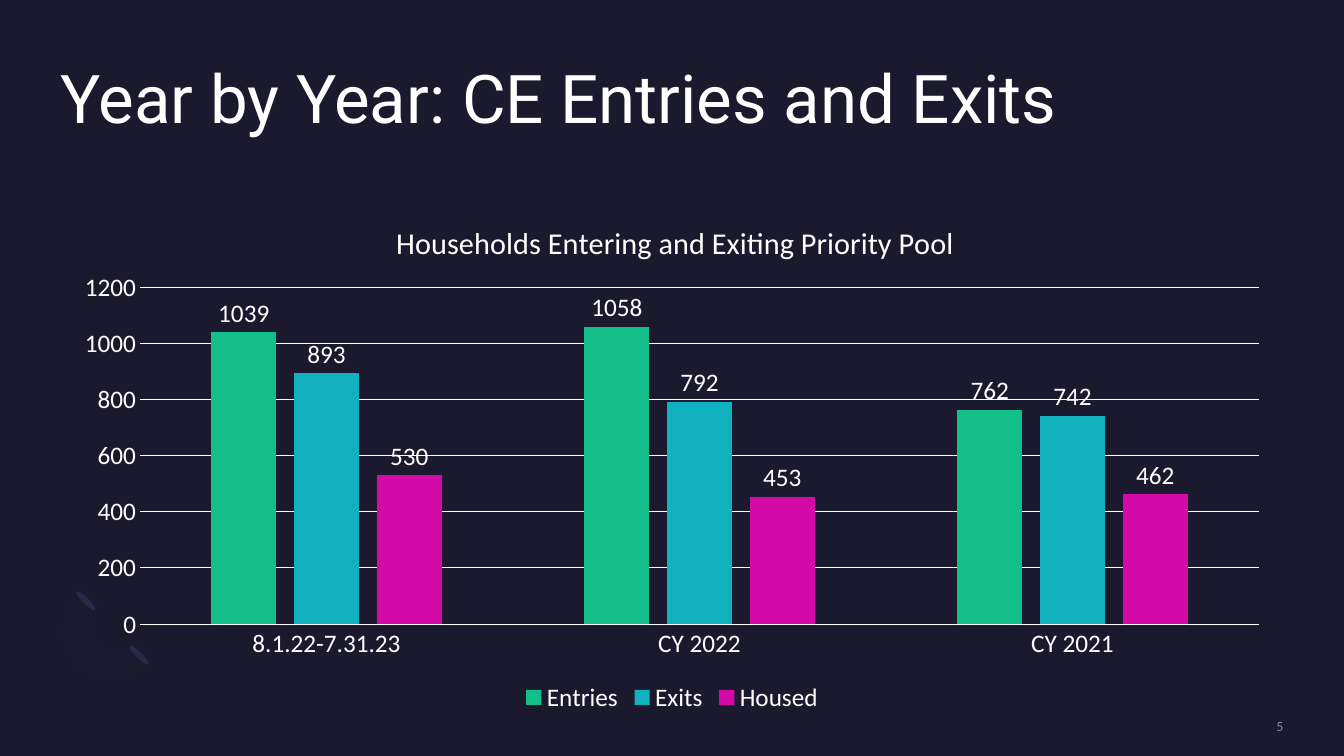
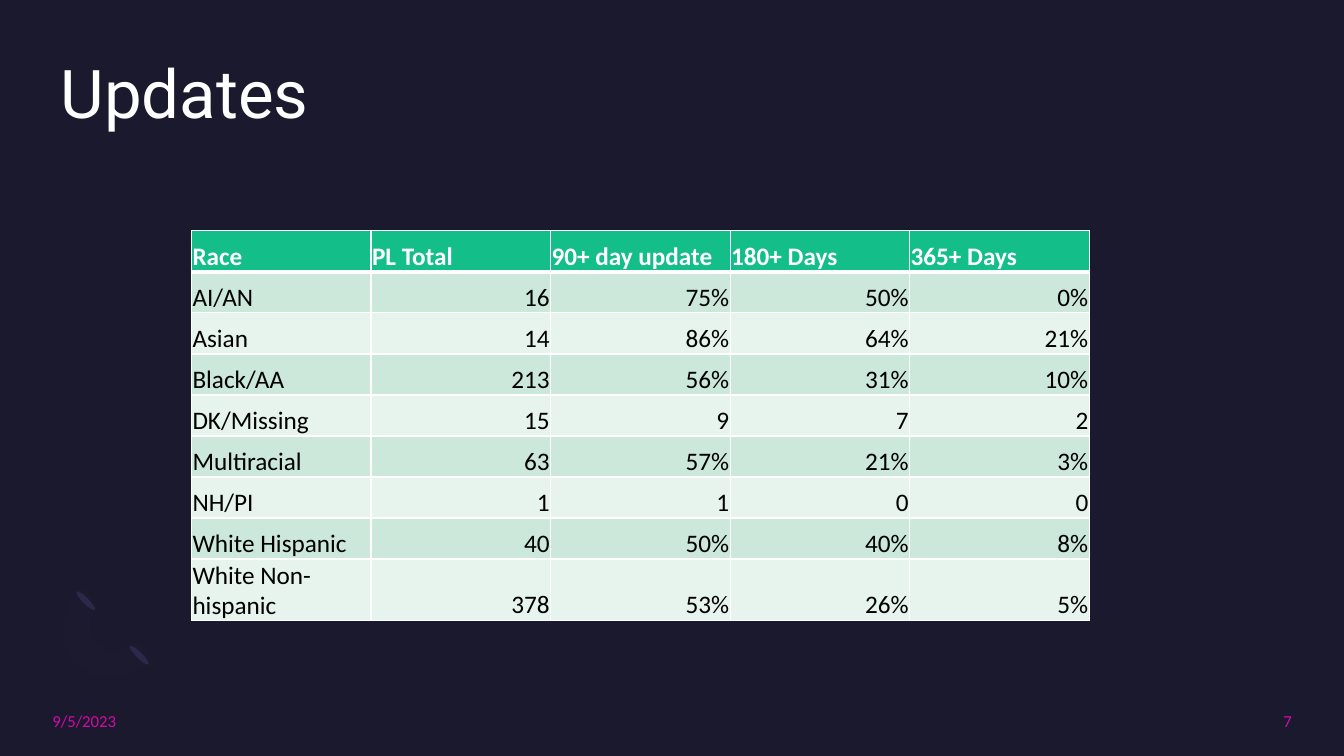
"""Build two dark slides: a chart of yearly entries and exits, and a table of updates."""
from functools import reduce
from itertools import product

from lxml.etree import SubElement
from pptx import Presentation
from pptx.chart.data import CategoryChartData
from pptx.dml.color import RGBColor
from pptx.enum.chart import XL_CHART_TYPE, XL_LABEL_POSITION, XL_LEGEND_POSITION, XL_TICK_MARK
from pptx.enum.shapes import MSO_SHAPE
from pptx.enum.text import MSO_ANCHOR, PP_ALIGN
from pptx.oxml import parse_xml
from pptx.oxml.ns import nsdecls, qn
from pptx.util import Inches, Pt

COLOURS = {
    "night": "1B192E", "dusk": "2C284A", "arc": "1C1A2F", "white": "FFFFFF", "black": "000000",
    "grey": "8A8A8E", "green": "13BE89", "teal": "12B1BF", "pink": "D40AA8",
    "mint": "CCE8DA", "pale": "E7F4ED",
}
INK = {name: RGBColor.from_string(value) for name, value in COLOURS.items()}

deck = Presentation()
deck.slide_width, deck.slide_height = Inches(13.33), Inches(7.5)
COLUMN, ROW = deck.slide_width / 100, deck.slide_height / 100


def place(*shares):
    """Turn alternating percentages of the slide's width and height into lengths."""
    return [round(share * (ROW if i % 2 else COLUMN)) for i, share in enumerate(shares)]


def assign(target, values):
    """Set each dotted attribute of target to its value."""
    for name, value in values.items():
        *parents, last = name.split(".")
        setattr(reduce(getattr, parents, target), last, value)


NO_MARGINS = {f"margin_{side}": 0 for side in ("left", "top", "right", "bottom")}
RIGHT = {"alignment": PP_ALIGN.RIGHT}
MIDDLE = {"vertical_anchor": MSO_ANCHOR.MIDDLE}
TITLE = {"name": "Roboto", "size": Pt(48), "color.rgb": INK["white"]}
PAGE = {"name": "Calibri", "size": Pt(10), "color.rgb": INK["grey"]}
FOOTER = {"name": "Calibri", "size": Pt(12), "color.rgb": INK["pink"]}
BODY = {"name": "Calibri", "size": Pt(18), "color.rgb": INK["white"]}

SLIDE_TEXTS = [
    [
        ("Year by Year: CE Entries and Exits", (4.5, 8.67, 91, 14), TITLE, {"line_spacing": 0.9}, NO_MARGINS),
        ("5", (81.6, 94.9, 13.9, 2.3), PAGE, RIGHT, NO_MARGINS | MIDDLE),
    ],
    [
        ("Updates", (4.5, 8, 91, 19.5), TITLE, {"line_spacing": 0.9}, NO_MARGINS),
        ("9/5/2023", (3.15, 92.67, 13.95, 5.33), FOOTER, {}, MIDDLE),
        ("7", (83.25, 92.67, 13.6, 5.33), FOOTER, RIGHT, MIDDLE),
    ],
]
ARC_CURVES = [
    [(5.7, 87.87), (4.2, 85.2), (4.35, 80.67), (6.08, 77.6)],
    [(7.43, 80), (6.53, 81.47), (6.45, 83.87), (7.2, 85.07)],
    [(7.2, 85.07), (7.95, 86.4), (9.23, 86.27), (10.13, 84.8)],
    [(11.4, 87.2), (9.75, 90.13), (7.13, 90.53), (5.7, 87.87)],
]
STEPS = 12
arc_points = []
for curve, step in product(ARC_CURVES, range(STEPS + 1)):
    t = step / STEPS
    weights = ((1 - t) ** 3, 3 * t * (1 - t) ** 2, 3 * t ** 2 * (1 - t), t ** 3)
    arc_points.append(place(*(sum(w * point[axis] for w, point in zip(weights, curve)) for axis in (0, 1))))

slides = []
for texts in SLIDE_TEXTS:
    slide = deck.slides.add_slide(deck.slide_layouts[6])
    slides.append(slide)
    slide.background.fill.solid()
    slide.background.fill.fore_color.rgb = INK["night"]

    outline = slide.shapes.build_freeform(*arc_points[0])
    outline.add_line_segments(arc_points[1:], close=True)
    ornaments = [(outline.convert_to_shape(), 0, "arc")]
    for left, top in ((10.13, 84.93), (6.15, 77.73)):
        petal = slide.shapes.add_shape(MSO_SHAPE.OVAL, *place(left, top, 0.45, 3.47))
        ornaments.append((petal, 135, "dusk"))
    for ornament, angle, colour in ornaments:
        ornament.fill.solid()
        ornament.line.fill.background()
        assign(ornament, {"rotation": angle, "fill.fore_color.rgb": INK[colour], "shadow.inherit": False})

    for text, area, font, paragraph, frame in texts:
        words = slide.shapes.add_textbox(*place(*area)).text_frame
        assign(words, {"text": text, "word_wrap": True} | frame)
        assign(words.paragraphs[0], paragraph)
        assign(words.paragraphs[0].runs[0].font, font)

chart_slide, table_slide = slides

HOUSEHOLDS = {
    "Entries": ((1039, 1058, 762), "green"),
    "Exits": ((893, 792, 742), "teal"),
    "Housed": ((530, 453, 462), "pink"),
}
households = CategoryChartData()
households.categories = ["8.1.22-7.31.23", "CY 2022", "CY 2021"]
for name, (counts, colour) in HOUSEHOLDS.items():
    households.add_series(name, counts)
pool = chart_slide.shapes.add_chart(
    XL_CHART_TYPE.COLUMN_CLUSTERED, *place(4.5, 25.07, 91, 69.87), households).chart
assign(pool, {
    "has_title": True,
    "chart_title.text_frame.text": "Households Entering and Exiting Priority Pool",
    "has_legend": True,
    "legend.position": XL_LEGEND_POSITION.BOTTOM,
    "legend.include_in_layout": False,
    "category_axis.major_tick_mark": XL_TICK_MARK.NONE,
    "category_axis.format.line.color.rgb": INK["white"],
    "category_axis.format.line.width": Pt(0.75),
    "value_axis.major_tick_mark": XL_TICK_MARK.NONE,
    "value_axis.minimum_scale": 0,
    "value_axis.maximum_scale": 1200,
    "value_axis.major_unit": 200,
    "value_axis.major_gridlines.format.line.color.rgb": INK["white"],
    "value_axis.major_gridlines.format.line.width": Pt(0.75),
})
pool.value_axis.format.line.fill.background()
columns = pool.plots[0]
assign(columns, {
    "gap_width": 219, "overlap": -27, "vary_by_categories": False, "has_data_labels": True,
    "data_labels.show_value": True, "data_labels.position": XL_LABEL_POSITION.OUTSIDE_END,
})
for part in (pool, pool.legend, pool.category_axis.tick_labels, pool.value_axis.tick_labels, columns.data_labels):
    assign(part.font, BODY)
assign(pool.chart_title.text_frame.paragraphs[0].runs[0].font, BODY | {"size": Pt(21.6), "bold": False})
for series, (counts, colour) in zip(columns.series, HOUSEHOLDS.values()):
    series.format.fill.solid()
    assign(series, {"format.fill.fore_color.rgb": INK[colour], "invert_if_negative": False})

TITLE_LAYOUT = {"xMode": "edge", "yMode": "edge", "x": 0.27, "y": 0.05}
PLOT_LAYOUT = {"layoutTarget": "inner", "xMode": "edge", "yMode": "edge",
               "x": 0.065, "y": 0.185, "w": 0.915, "h": 0.638}
chart_xml = pool.element.find(qn("c:chart"))
for tag, position, values in (("c:title", 1, TITLE_LAYOUT), ("c:plotArea", 0, PLOT_LAYOUT)):
    owner = chart_xml.find(qn(tag))
    for automatic in owner.findall(qn("c:layout")):
        owner.remove(automatic)
    layout = parse_xml(f"<c:layout {nsdecls('c')}><c:manualLayout/></c:layout>")
    for name, value in values.items():
        SubElement(layout[0], qn(f"c:{name}"), val=str(value))
    owner.insert(position, layout)

UPDATES = [
    ("Race", "PL Total", "90+ day update", "180+ Days", "365+ Days"),
    ("AI/AN", "16", "75%", "50%", "0%"),
    ("Asian", "14", "86%", "64%", "21%"),
    ("Black/AA", "213", "56%", "31%", "10%"),
    ("DK/Missing", "15", "9", "7", "2"),
    ("Multiracial", "63", "57%", "21%", "3%"),
    ("NH/PI", "1", "1", "0", "0"),
    ("White Hispanic", "40", "50%", "40%", "8%"),
    ("White Non-hispanic", "378", "53%", "26%", "5%"),
]
CELL = {"vertical_anchor": MSO_ANCHOR.BOTTOM, "margin_left": Inches(0.01), "margin_top": Inches(0.01),
        "margin_right": Inches(0.01), "margin_bottom": 0}
updates = table_slide.shapes.add_table(
    len(UPDATES), len(UPDATES[0]), *place(14.25, 30.53, 66.8, 5.43 * len(UPDATES))).table
updates.horz_banding = False
for r, c in product(range(len(UPDATES)), range(len(UPDATES[0]))):
    cell = updates.cell(r, c)
    heading = r == 0
    assign(cell, CELL | {"text": UPDATES[r][c]})
    line = cell.text_frame.paragraphs[0]
    assign(line, RIGHT if c and not heading else {})
    assign(line.runs[0].font, BODY | {"bold": heading, "color.rgb": INK["white" if heading else "black"]})
    weights = {"L": 1, "R": 1, "T": 3 if r == 1 else 1, "B": 3 if heading else 1}
    for side, weight in weights.items():
        cell._tc.get_or_add_tcPr().append(parse_xml(
            f'<a:ln{side} {nsdecls("a")} w="{Pt(weight)}"><a:solidFill>'
            f'<a:srgbClr val="{COLOURS["white"]}"/></a:solidFill></a:ln{side}>'))
    cell.fill.solid()
    cell.fill.fore_color.rgb = INK["green" if heading else "mint" if r % 2 else "pale"]

deck.save("out.pptx")
